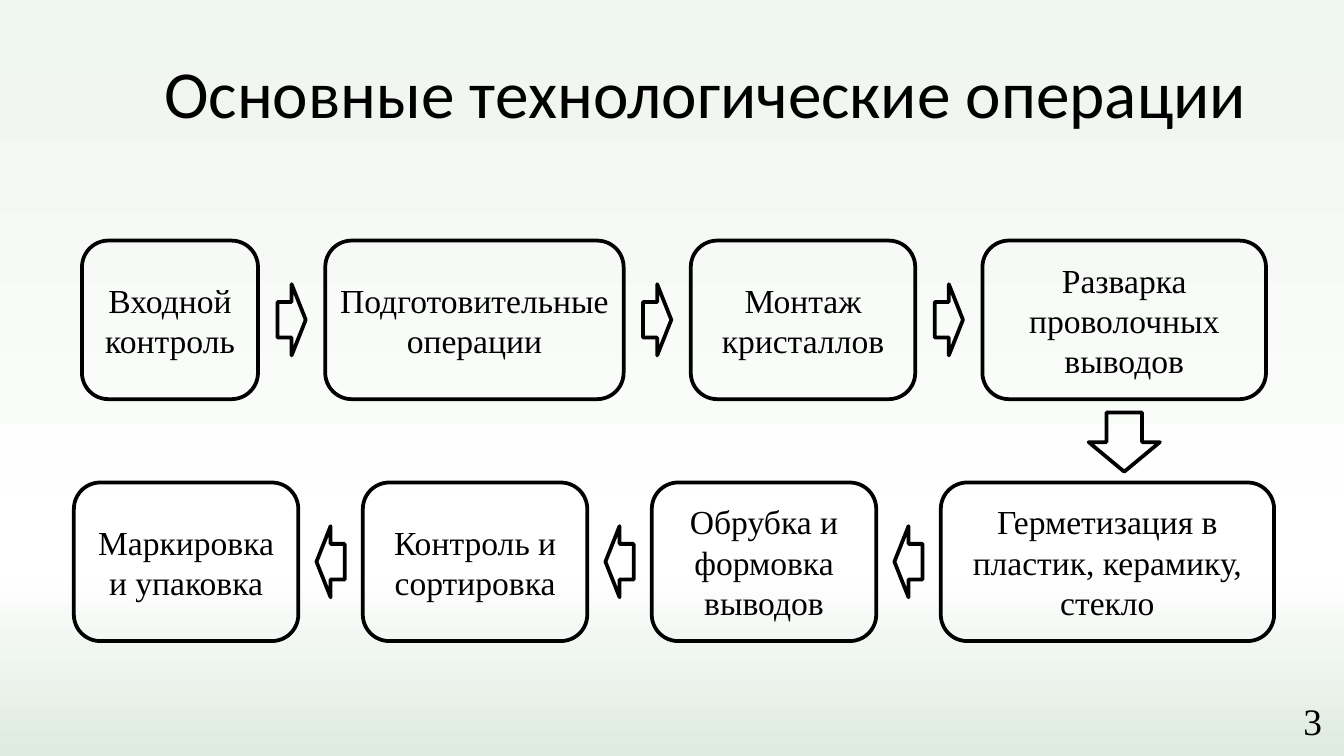
from copy import deepcopy

from pptx import Presentation
from pptx.dml.color import RGBColor
from pptx.enum.shapes import MSO_SHAPE
from pptx.enum.text import MSO_ANCHOR, MSO_AUTO_SIZE, PP_ALIGN
from pptx.oxml.ns import qn
from pptx.util import Inches, Pt

WIDTH = 10
HEIGHT = WIDTH * 9 / 16
BLACK = "000000"
SERIF = "Times New Roman"
BACKGROUND = [(0, "EFF5EF"), (0.75, "FFFFFF"), (1, "DFEBDF")]
TITLE = "Основные технологические операции"
PAGE = "3"

# Each row runs left to right: (text, box width, label width, label wraps, label lines)
ROWS = [
    dict(left=0.61, top=1.79, gap=0.5, backwards=False, steps=[
        ("Входной\nконтроль", 1.31, 1.18, False, 2),
        ("Подготовительные\nоперации", 2.22, 2.22, False, 2),
        ("Монтаж\nкристаллов", 1.67, 1.42, False, 2),
        ("Разварка проволочных выводов", 2.11, 1.88, True, 3),
    ]),
    dict(left=0.55, top=3.59, gap=0.48, backwards=True, steps=[
        ("Маркировка и упаковка", 1.67, 1.54, True, 2),
        ("Контроль и сортировка", 1.67, 1.49, True, 2),
        ("Обрубка и формовка выводов", 1.67, 1.58, True, 3),
        ("Герметизация в пластик, керамику, стекло", 2.48, 2.5, True, 3),
    ]),
]
BOX_H = 1.18
LINE_H, LABEL_PAD = 0.3, 0.11
ARROW_W, ARROW_H, DOWN_LENGTH = 0.21, 0.53, 0.44


def color(hex_string):
    return RGBColor.from_string(hex_string)


def paint_background(s):
    fill = s.background.fill
    fill.gradient()
    fill.gradient_angle = 270
    gs_list = next(s.element.iter(qn("a:gsLst")))
    gs_list.append(deepcopy(gs_list[-1]))
    for stop, (position, hex_string) in zip(fill.gradient_stops, BACKGROUND):
        stop.position = position
        stop.color.rgb = color(hex_string)


def add_outline(s, kind, cx, cy, w, h):
    """Add an unfilled preset shape centred on (cx, cy)."""
    sp = s.shapes.add_shape(kind, Inches(cx - w / 2), Inches(cy - h / 2), Inches(w), Inches(h))
    sp.shadow.inherit = False
    sp.fill.background()
    sp.line.color.rgb = color(BLACK)
    sp.line.width = Pt(2)
    return sp


def add_text(s, text, cx, cy, w, h, size=18, font=SERIF, wrap=True, align=PP_ALIGN.CENTER):
    """Add a text box centred on (cx, cy); a newline becomes a line break."""
    box = s.shapes.add_textbox(Inches(cx - w / 2), Inches(cy - h / 2), Inches(w), Inches(h))
    tf = box.text_frame
    tf.word_wrap = wrap
    tf.auto_size = MSO_AUTO_SIZE.SHAPE_TO_FIT_TEXT
    tf.vertical_anchor = MSO_ANCHOR.MIDDLE
    p = tf.paragraphs[0]
    p.alignment = align
    for i, line in enumerate(text.split("\n")):
        if i:
            p.add_line_break()
        r = p.add_run()
        r.text = line
        r.font.size = Pt(size)
        r.font.name = font
        r.font.color.rgb = color(BLACK)
    return tf


def add_row(s, left, top, gap, backwards, steps):
    """Draw boxes, labels and the arrows between them; return the last box's centre."""
    cy = top + BOX_H / 2
    for i, (text, width, label_w, wrap, lines) in enumerate(steps):
        if i:
            arrow = add_outline(s, MSO_SHAPE.RIGHT_ARROW, left - gap / 2, cy, ARROW_W, ARROW_H)
            if backwards:
                arrow.element.spPr.find(qn("a:xfrm")).set("flipH", "1")
        cx = left + width / 2
        add_outline(s, MSO_SHAPE.ROUNDED_RECTANGLE, cx, cy, width, BOX_H)
        add_text(s, text, cx, cy, label_w, LINE_H * lines + LABEL_PAD, wrap=wrap)
        left += width + gap
    return cx


def main():
    prs = Presentation()
    prs.slide_width, prs.slide_height = Inches(WIDTH), Inches(HEIGHT)
    s = prs.slides.add_slide(prs.slide_layouts[6])
    paint_background(s)

    tf = add_text(s, TITLE, 5.25, 0.67, 8.5, 0.78, size=36, font="Calibri")
    tf.auto_size = MSO_AUTO_SIZE.NONE
    tf.vertical_anchor = MSO_ANCHOR.BOTTOM
    tf.margin_left = tf.margin_right = Inches(0.13)
    tf.margin_top = tf.margin_bottom = Inches(0.07)
    tf.paragraphs[0].line_spacing = 0.9

    upper, lower = ROWS
    turn_x = add_row(s, **upper)
    add_row(s, **lower)
    turn_y = (upper["top"] + BOX_H + lower["top"]) / 2 + 0.01
    down = add_outline(s, MSO_SHAPE.RIGHT_ARROW, turn_x, turn_y, DOWN_LENGTH, ARROW_H)
    down.rotation = 90

    add_text(s, PAGE, 9.77, 5.36, 0.34, 0.44, size=20, wrap=False, align=PP_ALIGN.JUSTIFY)
    prs.save("out.pptx")


if __name__ == "__main__":
    main()
